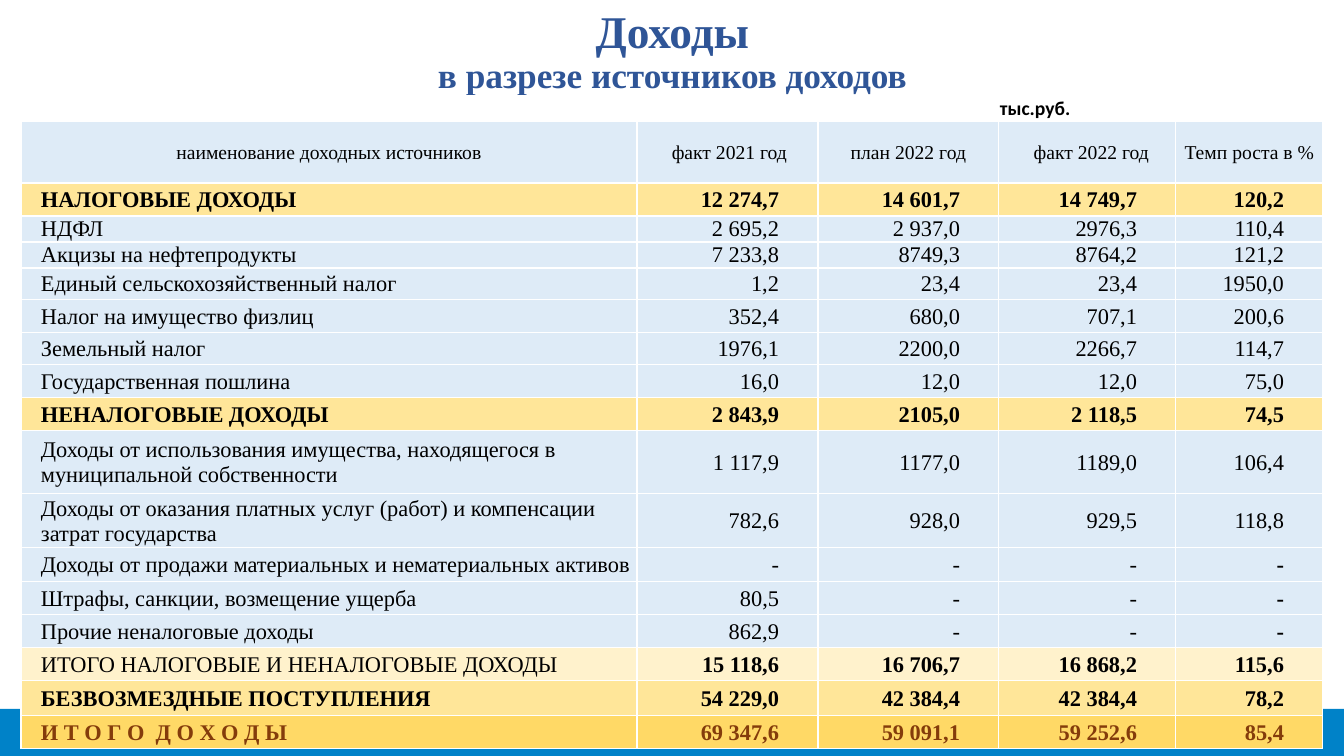
import pptx
import pptx.util
import lxml.etree
from pptx.dml.color import RGBColor
from pptx.enum.shapes import MSO_SHAPE
from pptx.enum.text import MSO_ANCHOR, MSO_AUTO_SIZE, PP_ALIGN
from pptx.oxml.ns import qn

WHITE = RGBColor(0xFF, 0xFF, 0xFF)
BLACK = RGBColor(0x00, 0x00, 0x00)
BAR_BLUE = RGBColor(0x00, 0x82, 0xC8)
TITLE_BLUE = RGBColor(0x2F, 0x55, 0x97)
PALE_BLUE = RGBColor(0xDE, 0xEB, 0xF7)
CREAM = RGBColor(0xFF, 0xF2, 0xCC)
YELLOW = RGBColor(0xFF, 0xE6, 0x99)
GOLD = RGBColor(0xFF, 0xD9, 0x66)
BROWN = RGBColor(0x84, 0x3C, 0x0B)
SERIF = "Times New Roman"
PX_PER_INCH = 100.8
SLIDE_WIDTH, SLIDE_HEIGHT = 1344, 756

# Row styles: fill, text colour, bold label, bold values
ITEM = (PALE_BLUE, BLACK, False, False)
GROUP = (YELLOW, BLACK, True, True)
SUBTOTAL = (CREAM, BLACK, False, True)
TOTAL = (GOLD, BROWN, True, True)

COLUMN_WIDTHS = [616, 181, 181, 177, 147]
UNIT_HEIGHT, HEADER_HEIGHT = 25, 62
UNIT_COLUMN = 3
# Header text and extra left inset
HEADERS = [
    ("наименование доходных источников", 0),
    ("факт 2021 год", 4),
    ("план 2022 год", 0),
    ("факт 2022 год", 8),
    ("Темп роста в %", 0),
]
# Height, style, label, values
INCOME_ROWS = [
    (33, GROUP, "НАЛОГОВЫЕ ДОХОДЫ", ["12 274,7", "14 601,7", "14 749,7", "120,2"]),
    (26, ITEM, "НДФЛ", ["2 695,2", "2 937,0", "2976,3", "110,4"]),
    (26, ITEM, "Акцизы на нефтепродукты", ["7 233,8", "8749,3", "8764,2", "121,2"]),
    (32, ITEM, "Единый сельскохозяйственный налог", ["1,2", "23,4", "23,4", "1950,0"]),
    (33, ITEM, "Налог на имущество физлиц", ["352,4", "680,0", "707,1", "200,6"]),
    (32, ITEM, "Земельный налог", ["1976,1", "2200,0", "2266,7", "114,7"]),
    (33, ITEM, "Государственная пошлина", ["16,0", "12,0", "12,0", "75,0"]),
    (33, GROUP, "НЕНАЛОГОВЫЕ ДОХОДЫ", ["2 843,9", "2105,0", "2 118,5", "74,5"]),
    (63, ITEM, "Доходы от использования имущества, находящегося в муниципальной собственности",
     ["1 117,9", "1177,0", "1189,0", "106,4"]),
    (54, ITEM, "Доходы от оказания платных услуг (работ) и компенсации затрат государства",
     ["782,6", "928,0", "929,5", "118,8"]),
    (34, ITEM, "Доходы от продажи материальных и нематериальных активов", ["-", "-", "-", "-"]),
    (33, ITEM, "Штрафы, санкции, возмещение ущерба", ["80,5", "-", "-", "-"]),
    (33, ITEM, "Прочие неналоговые доходы", ["862,9", "-", "-", "-"]),
    (33, SUBTOTAL, "ИТОГО НАЛОГОВЫЕ И НЕНАЛОГОВЫЕ ДОХОДЫ",
     ["15 118,6", "16 706,7", "16 868,2", "115,6"]),
    (35, GROUP, "БЕЗВОЗМЕЗДНЫЕ ПОСТУПЛЕНИЯ", ["54 229,0", "42 384,4", "42 384,4", "78,2"]),
    (33, TOTAL, "И Т О Г О  Д О Х О Д Ы", ["69 347,6", "59 091,1", "59 252,6", "85,4"]),
]


def px(length):
    return pptx.util.Emu(round(length * 914400 / PX_PER_INCH))


def set_font(font, size, colour, bold, name=SERIF):
    font.size = pptx.util.Pt(size)
    font.name = name
    font.bold = bold
    font.color.rgb = colour


def add_bottom_bar(slide, left, top, width, height):
    bar = slide.shapes.add_shape(MSO_SHAPE.RECTANGLE, px(left), px(top), px(width), px(height))
    bar.shadow.inherit = False
    bar.fill.solid()
    bar.fill.fore_color.rgb = BAR_BLUE
    bar.line.fill.background()


def place_title(slide, left, top, width, height):
    title = slide.shapes.title
    title.left, title.top, title.width, title.height = map(px, (left, top, width, height))
    frame = title.text_frame
    frame.word_wrap = True
    frame.auto_size = MSO_AUTO_SIZE.NONE
    frame.vertical_anchor = MSO_ANCHOR.MIDDLE
    paragraph = frame.paragraphs[0]
    paragraph.alignment = PP_ALIGN.CENTER
    paragraph.line_spacing = 0.9
    heading = paragraph.add_run()
    heading.text = "Доходы"
    set_font(heading.font, 32.4, TITLE_BLUE, True)
    paragraph.add_line_break()
    subheading = paragraph.add_run()
    subheading.text = "в разрезе источников доходов"
    set_font(subheading.font, 25.2, TITLE_BLUE, True)


def add_borders(cell):
    properties = cell._tc.get_or_add_tcPr()
    for position, side in enumerate(("a:lnL", "a:lnR", "a:lnT", "a:lnB")):
        line = lxml.etree.Element(qn(side), w=str(pptx.util.Pt(1)))
        fill = lxml.etree.SubElement(line, qn("a:solidFill"))
        lxml.etree.SubElement(fill, qn("a:srgbClr"), val=str(WHITE))
        properties.insert(position, line)


def format_cell(cell, text, size, fill=None, colour=BLACK, bold=False, font_name=SERIF,
                alignment=PP_ALIGN.LEFT, anchor=MSO_ANCHOR.MIDDLE, left=1, right=1):
    cell.margin_left, cell.margin_right = px(left), px(right)
    cell.margin_top, cell.margin_bottom = px(1), 0
    cell.vertical_anchor = anchor
    if fill is None:
        cell.fill.background()
    else:
        cell.fill.solid()
        cell.fill.fore_color.rgb = fill
    add_borders(cell)
    cell.text = text
    paragraph = cell.text_frame.paragraphs[0]
    paragraph.alignment = alignment
    set_font(paragraph.font, size, colour, bold, font_name)


def add_income_table(slide, left, top):
    heights = [UNIT_HEIGHT, HEADER_HEIGHT] + [row[0] for row in INCOME_ROWS]
    table = slide.shapes.add_table(
        len(heights), len(COLUMN_WIDTHS), px(left), px(top),
        px(sum(COLUMN_WIDTHS)), px(sum(heights))).table
    table.first_row = table.horz_banding = False
    for column, width in zip(table.columns, COLUMN_WIDTHS):
        column.width = px(width)
    for row, height in zip(table.rows, heights):
        row.height = px(height)

    # Unit and header rows
    for column, (header, shift) in enumerate(HEADERS):
        unit = "тыс.руб." if column == UNIT_COLUMN else ""
        format_cell(table.cell(0, column), unit, 14, bold=True, font_name="Calibri",
                    anchor=MSO_ANCHOR.BOTTOM)
        format_cell(table.cell(1, column), header, 14, PALE_BLUE,
                    alignment=PP_ALIGN.CENTER, left=1 + shift)

    # Income rows
    for row, (_, style, label, values) in enumerate(INCOME_ROWS, start=2):
        fill, colour, bold_label, bold_values = style
        format_cell(table.cell(row, 0), label, 16, fill, colour, bold_label, left=20)
        for column, value in enumerate(values, start=1):
            bold_dash = value == "-" and column == len(values)
            format_cell(table.cell(row, column), value, 16, fill, colour,
                        bold_values or bold_dash, alignment=PP_ALIGN.RIGHT, left=39, right=39)


def build_income_slide(presentation):
    slide = presentation.slides.add_slide(presentation.slide_layouts[5])
    add_bottom_bar(slide, 0, 709, SLIDE_WIDTH, 47)
    place_title(slide, 93, 0, 1159, 106)
    add_income_table(slide, 21, 96)


def main():
    presentation = pptx.Presentation()
    presentation.slide_width = px(SLIDE_WIDTH)
    presentation.slide_height = px(SLIDE_HEIGHT)
    build_income_slide(presentation)
    presentation.save("out.pptx")


if __name__ == "__main__":
    main()
